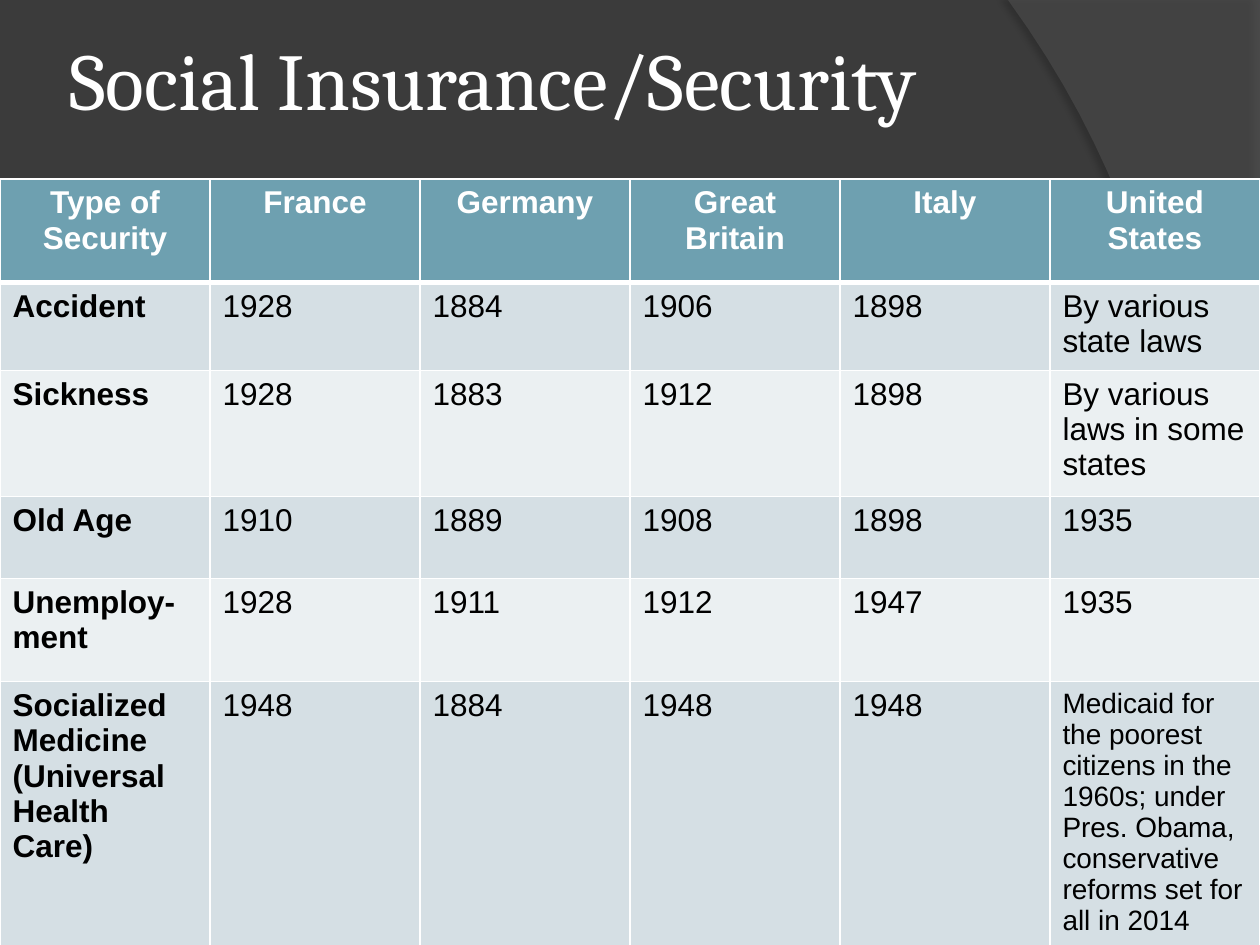
from dataclasses import dataclass

from pptx import Presentation
from pptx.dml.color import RGBColor as RGB
from pptx.enum.text import MSO_ANCHOR as ANCHOR, PP_ALIGN as ALIGN
from pptx.oxml.ns import qn
from pptx.oxml.xmlchemy import OxmlElement as Element
from pptx.util import Inches, Pt


@dataclass(frozen=True)
class Theme:
    background: str = "3B3B3B"
    wave: str = "7F7F7F"
    side: str = "5E5E5E"
    shadow: str = "000000"
    light: str = "FFFFFF"
    dark: str = "000000"
    header: str = "6EA0B0"
    bands: tuple = ("D5DFE4", "EBF0F2")
    title_font: str = "Cambria"
    body_font: str = "Arial"
    title_size: int = 46
    body_size: int = 18
    small_size: int = 16


THEME = Theme()
WIDTH, HEIGHT = 10, 7.5

HEADINGS = ["Type of Security", "France", "Germany", "Great Britain", "Italy",
            "United States"]
PROGRAMS = [
    ["Accident", "1928", "1884", "1906", "1898", "By various state laws"],
    ["Sickness", "1928", "1883", "1912", "1898", "By various laws in some states"],
    ["Old Age", "1910", "1889", "1908", "1898", "1935"],
    ["Unemploy-ment", "1928", "1911", "1912", "1947", "1935"],
    ["Socialized Medicine (Universal Health Care)", "1948", "1884", "1948", "1948",
     "Medicaid for the poorest citizens in the 1960s; under Pres. Obama, "
     "conservative reforms set for all in 2014"],
]
ROW_HEIGHTS = [0.82, 0.69, 1, 0.65, 0.82, 2.23]


def write(tf, text, *, font=THEME.body_font, size=THEME.body_size,
          color=THEME.dark, bold=False, align=ALIGN.LEFT):
    tf.word_wrap = True
    p = tf.paragraphs[0]
    p.alignment = align
    r = p.add_run()
    r.text = text
    r.font.name, r.font.size, r.font.bold = font, Pt(size), bold
    r.font.color.rgb = RGB.from_string(color)


def add_child(parent, tag, **attributes):
    child = Element(tag)
    for name, value in attributes.items():
        child.set(name, str(value))
    parent.append(child)
    return child


def add_color(parent, color, opacity=100):
    clr = add_child(parent, "a:srgbClr", val=color)
    add_child(clr, "a:alpha", val=opacity * 1000)


def bezier(p0, p1, p2, p3, steps=40):
    """Points along a cubic curve, without its start."""
    for i in range(1, steps + 1):
        t = i / steps
        u = 1 - t
        yield tuple(u**3 * a + 3 * u * u * t * b + 3 * u * t * t * c + t**3 * d
                    for a, b, c, d in zip(p0, p1, p2, p3))


def add_swoosh(slide, box, corners, curve, color, opacity, shadow):
    """Translucent outline: straight corners, then a curve; points are shares of box.

    shadow is (opacity %, blur pt, distance pt, direction in degrees).
    """
    x, y, w, h = box
    points = [(Inches(x + px * w), Inches(y + py * h))
              for px, py in [*corners, *bezier(corners[-1], *curve)]]
    builder = slide.shapes.build_freeform(*points[0])
    builder.add_line_segments(points[1:], close=True)
    sp = builder.convert_to_shape()
    sp.fill.solid()
    sp.fill.fore_color.rgb = RGB.from_string(color)
    sp.line.fill.background()
    sp.shadow.inherit = False
    props = sp._element.spPr
    add_child(props.find(qn("a:solidFill"))[0], "a:alpha", val=opacity * 1000)
    alpha, blur, distance, direction = shadow
    outer = add_child(props.find(qn("a:effectLst")), "a:outerShdw",
                      blurRad=Pt(blur), dist=Pt(distance), dir=direction * 60000,
                      rotWithShape=0)
    add_color(outer, THEME.shadow, alpha)


def add_backdrop(slide):
    slide.background.fill.solid()
    slide.background.fill.fore_color.rgb = RGB.from_string(THEME.background)
    add_swoosh(slide, (0, 5.2, WIDTH, 2.31),
               [(0, 0.8), (0, 1), (1, 1), (1, 0)],
               [(0.56, 0.9), (0.39, 0.86), (0, 0.8)],
               THEME.wave, 45, (35, 4, 3.5, 270))
    add_swoosh(slide, (8, 0, 2, HEIGHT),
               [(1, 0), (1, 1), (0.1, 1)],
               [(0.68, 0.83), (1.09, 0.4), (0, 0)],
               THEME.side, 40, (45, 4, 4, 180))


def add_title(slide, box, text):
    tf = slide.shapes.add_textbox(*map(Inches, box)).text_frame
    tf.vertical_anchor = ANCHOR.MIDDLE
    tf.margin_left = tf.margin_right = Inches(0.05)
    write(tf, text, font=THEME.title_font, size=THEME.title_size, color=THEME.light)


def set_borders(cell, **widths):
    for side in "LRTB":
        ln = add_child(cell._tc.get_or_add_tcPr(), f"a:ln{side}",
                       w=Pt(widths.get(side, 1)))
        add_color(add_child(ln, "a:solidFill"), THEME.light)


def fill_cell(cell, row, col, text):
    header = row == 0
    set_borders(cell, B=3 if header else 1, T=3 if row == 1 else 1)
    cell.fill.solid()
    band = THEME.header if header else THEME.bands[(row - 1) % 2]
    cell.fill.fore_color.rgb = RGB.from_string(band)
    long_text = len(text) > 60
    write(cell.text_frame, text,
          size=THEME.small_size if long_text else THEME.body_size,
          color=THEME.light if header else THEME.dark,
          bold=header or col == 0,
          align=ALIGN.CENTER if header else ALIGN.LEFT)


def add_security_table(slide, box, rows):
    table = slide.shapes.add_table(len(rows), len(rows[0]),
                                   *map(Inches, box)).table
    for column in table.columns:
        column.width = Inches(box[2] / len(rows[0]))
    for i, (height, texts) in enumerate(zip(ROW_HEIGHTS, rows)):
        table.rows[i].height = Inches(height)
        for j, text in enumerate(texts):
            fill_cell(table.cell(i, j), i, j, text)


def main():
    prs = Presentation()
    prs.slide_width, prs.slide_height = Inches(WIDTH), Inches(HEIGHT)
    slide = prs.slides.add_slide(prs.slide_layouts[6])
    add_backdrop(slide)
    add_title(slide, (0.5, 0, 8.17, 1.25), "Social Insurance/Security")
    add_security_table(slide, (0, 1.42, WIDTH, sum(ROW_HEIGHTS)),
                       [HEADINGS, *PROGRAMS])
    prs.save("out.pptx")


if __name__ == "__main__":
    main()
